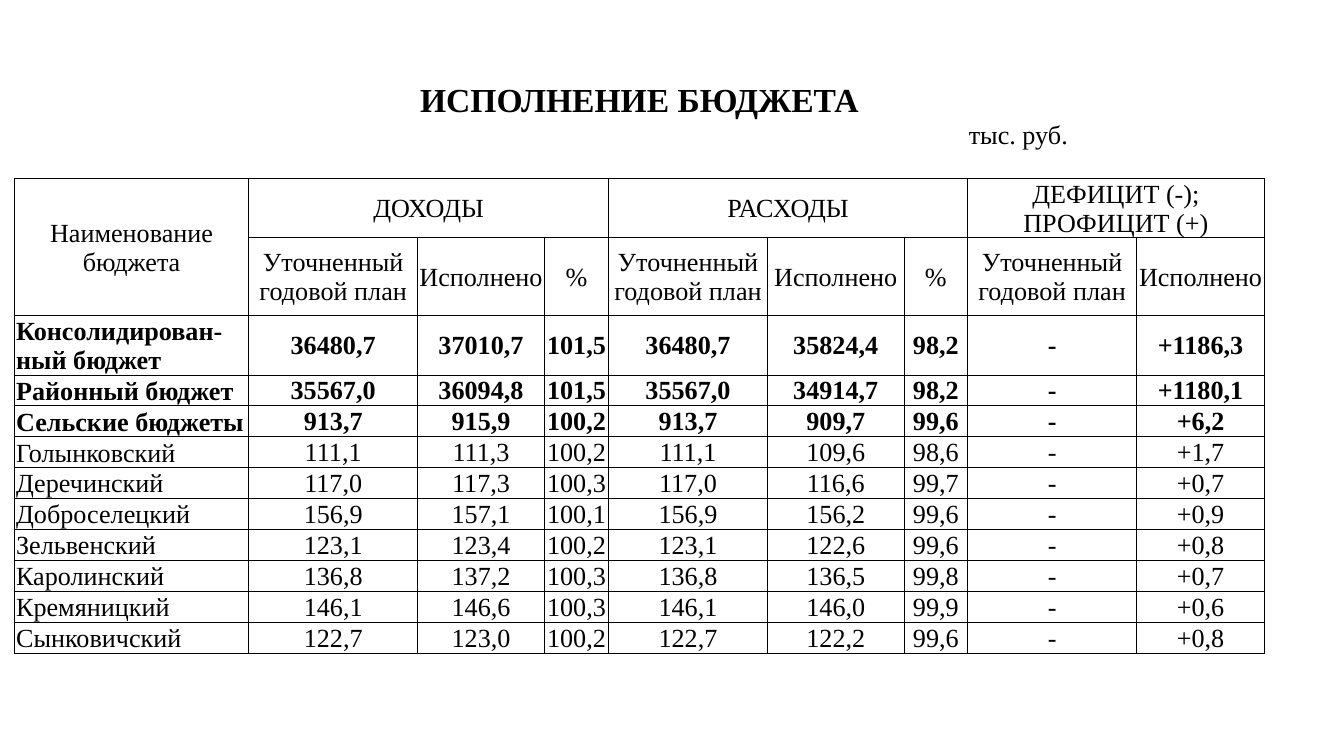
import pptx
import pptx.dml.color
import pptx.enum.text
import pptx.oxml
import pptx.oxml.ns
import pptx.util
from lxml import etree

BLACK = pptx.dml.color.RGBColor(0, 0, 0)
FONT = "Times New Roman"
NO_STYLE = "{2D5ABB26-0587-4C30-8999-92F81FD0307C}"
ALIGN = pptx.enum.text.PP_ALIGN
ANCHOR = pptx.enum.text.MSO_ANCHOR

SLIDE_WIDTH = pptx.util.Inches(10)
SLIDE_HEIGHT = SLIDE_WIDTH * 9 // 16

COLS = [1.74, 1.01, 0.25, 0.65, 0.29, 0.48, 1.18, 0.21, 0.81, 0.09, 0.38,
        1.26, 0.52, 0.43]
ROWS = [0.29, 0.44, 0.43, 0.58, 0.44] + [0.23] * 9
HEAD_ROW, DATA_ROW = 2, 4
BOLD_ROWS = 3

# First and last grid column of each visible column
FIELDS = [(0, 0), (1, 2), (3, 4), (5, 5), (6, 6), (7, 8), (9, 10), (11, 11), (12, 13)]
UNIT_FIELDS = [(2, 3), (4, 5), (6, 7), (8, 9), (11, 12)]
GROUPS = [("ДОХОДЫ", 1, 5), ("РАСХОДЫ", 6, 10), ("ДЕФИЦИТ (-); ПРОФИЦИТ (+)", 11, 13)]

PLAN, DONE = "Уточненный годовой план", "Исполнено"
SUBHEADS = [PLAN, DONE, "%", PLAN, DONE, "%", PLAN, DONE]

BUDGETS = [
    ("Консолидирован-ный бюджет", "36480,7", "37010,7", "101,5", "36480,7", "35824,4", "98,2", "-", "+1186,3"),
    ("Районный бюджет", "35567,0", "36094,8", "101,5", "35567,0", "34914,7", "98,2", "-", "+1180,1"),
    ("Сельские бюджеты", "913,7", "915,9", "100,2", "913,7", "909,7", "99,6", "-", "+6,2"),
    ("Голынковский", "111,1", "111,3", "100,2", "111,1", "109,6", "98,6", "-", "+1,7"),
    ("Деречинский", "117,0", "117,3", "100,3", "117,0", "116,6", "99,7", "-", "+0,7"),
    ("Доброселецкий", "156,9", "157,1", "100,1", "156,9", "156,2", "99,6", "-", "+0,9"),
    ("Зельвенский", "123,1", "123,4", "100,2", "123,1", "122,6", "99,6", "-", "+0,8"),
    ("Каролинский", "136,8", "137,2", "100,3", "136,8", "136,5", "99,8", "-", "+0,7"),
    ("Кремяницкий", "146,1", "146,6", "100,3", "146,1", "146,0", "99,9", "-", "+0,6"),
    ("Сынковичский", "122,7", "123,0", "100,2", "122,7", "122,2", "99,6", "-", "+0,8"),
]


def add_grid(s):
    """Add an unstyled table with the column widths and row heights set."""
    inch = pptx.util.Inches
    frame = s.shapes.add_table(len(ROWS), len(COLS), inch(0.11), inch(0.6),
                               inch(sum(COLS)), inch(sum(ROWS)))
    table = frame.table
    table.first_row = table.horz_banding = False
    style = frame._element.find(".//" + pptx.oxml.ns.qn("a:tableStyleId"))
    style.text = NO_STYLE
    for column, width in zip(table.columns, COLS):
        column.width = inch(width)
    for row, height in zip(table.rows, ROWS):
        row.height = inch(height)
    return table


def set_borders(cell, sides):
    tc_pr = cell._tc.get_or_add_tcPr()
    for side in sides:
        line = etree.SubElement(tc_pr, pptx.oxml.ns.qn("a:ln" + side),
                                w=str(pptx.util.Pt(0.5)))
        fill = etree.SubElement(line, pptx.oxml.ns.qn("a:solidFill"))
        etree.SubElement(fill, pptx.oxml.ns.qn("a:srgbClr"), val=str(BLACK))


def style_cells(table):
    for r in range(len(ROWS)):
        for c in range(len(COLS)):
            cell = table.cell(r, c)
            if r >= HEAD_ROW:
                set_borders(cell, "LRTB")
            elif r == HEAD_ROW - 1:
                set_borders(cell, "B")
            cell.fill.background()


def merge(table, row, first, last, last_row=None):
    cell = table.cell(row, first)
    end = table.cell(last_row or row, last)
    if end._tc is not cell._tc:
        cell.merge(end)
    return cell


def write(cell, text, align=ALIGN.CENTER, anchor=ANCHOR.MIDDLE, size=14, bold=False):
    cell.margin_left = cell.margin_right = cell.margin_top = pptx.util.Inches(0.01)
    cell.margin_bottom = 0
    cell.vertical_anchor = anchor
    cell.text_frame.text = text
    for p in cell.text_frame.paragraphs:
        p.alignment = align
        for r in p.runs:
            r.font.name = FONT
            r.font.size = pptx.util.Pt(size)
            r.font.bold = bold
            r.font.color.rgb = BLACK


def add_title(table):
    write(merge(table, 0, 0, len(COLS) - 1), "ИСПОЛНЕНИЕ БЮДЖЕТА", size=18, bold=True)
    for first, last in UNIT_FIELDS:
        unit = merge(table, 1, first, last)
    write(unit, "тыс. руб.", ALIGN.LEFT, ANCHOR.TOP)


def add_headings(table):
    write(merge(table, HEAD_ROW, 0, 0, HEAD_ROW + 1), "Наименование\nбюджета")
    for text, first, last in GROUPS:
        write(merge(table, HEAD_ROW, first, last), text)
    for text, (first, last) in zip(SUBHEADS, FIELDS[1:]):
        write(merge(table, HEAD_ROW + 1, first, last), text)


def add_budgets(table):
    for i, budget in enumerate(BUDGETS):
        for text, (first, last) in zip(budget, FIELDS):
            is_name = first == 0
            write(merge(table, DATA_ROW + i, first, last), text,
                  ALIGN.LEFT if is_name else ALIGN.CENTER,
                  ANCHOR.BOTTOM if is_name else ANCHOR.MIDDLE,
                  bold=i < BOLD_ROWS)


def main():
    prs = pptx.Presentation()
    prs.slide_width = SLIDE_WIDTH
    prs.slide_height = SLIDE_HEIGHT
    s = prs.slides.add_slide(prs.slide_layouts[6])
    table = add_grid(s)
    style_cells(table)
    add_title(table)
    add_headings(table)
    add_budgets(table)
    prs.save("out.pptx")


if __name__ == "__main__":
    main()
